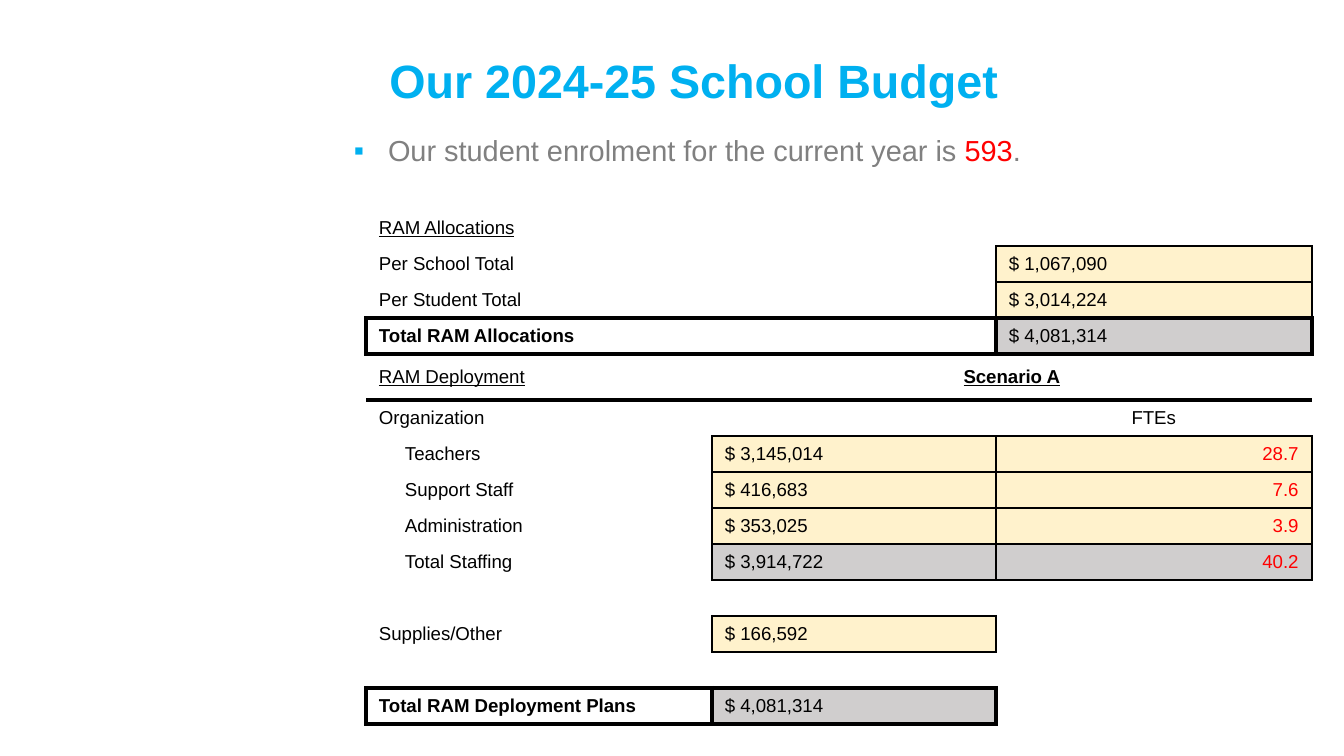
from lxml import etree
from pptx import Presentation
from pptx.dml.color import RGBColor
from pptx.enum.text import MSO_ANCHOR, PP_ALIGN
from pptx.oxml.ns import qn
from pptx.util import Pt

TOP, MIDDLE = MSO_ANCHOR.TOP, MSO_ANCHOR.MIDDLE
LEFT, CENTER, RIGHT = PP_ALIGN.LEFT, PP_ALIGN.CENTER, PP_ALIGN.RIGHT

BLACK = RGBColor(0x00, 0x00, 0x00)
RED = RGBColor(0xFF, 0x00, 0x00)
BLUE = RGBColor(0x00, 0xB0, 0xF0)
GRAY = RGBColor(0x80, 0x80, 0x80)
INPUT_FILL = RGBColor(0xFF, 0xF2, 0xCC)
TOTAL_FILL = RGBColor(0xD0, 0xCE, 0xCE)

FONT = "Arial"
PX_PER_INCH = 134.4
THIN, THICK = 1, 2.25

COLUMN_WIDTHS = [346, 284, 316]
ROW_HEIGHT, HEADING_HEIGHT = 36, 46
HEADING_ROW = 4
ROWS = [
    ["RAM Allocations", "", ""],
    ["Per School Total", "", "$ 1,067,090"],
    ["Per Student Total", "", "$ 3,014,224"],
    ["Total RAM Allocations", "", "$ 4,081,314"],
    ["RAM Deployment", "Scenario A", ""],
    ["Organization", "", "FTEs"],
    ["Teachers", "$ 3,145,014", "28.7"],
    ["Support Staff", "$ 416,683", "7.6"],
    ["Administration", "$ 353,025", "3.9"],
    ["Total Staffing", "$ 3,914,722", "40.2"],
    ["", "", ""],
    ["Supplies/Other", "$ 166,592", ""],
    ["", "", ""],
    ["Total RAM Deployment Plans", "$ 4,081,314", ""],
]
STAFF_ROWS = range(6, 10)
TOTAL_ROWS = (3, 9, 13)
UNDERLINED = ("RAM Allocations", "RAM Deployment", "Scenario A")
BOLD = ("Total RAM Allocations", "Scenario A", "Total RAM Deployment Plans")

# Outlined runs of cells: row, first column, last column, line width
OUTLINES = [(row, 2, 2, THIN) for row in (1, 2)]
OUTLINES += [(row, column, column, THIN) for row in STAFF_ROWS for column in (1, 2)]
OUTLINES += [(11, 1, 1, THIN), (3, 0, 1, THICK), (3, 2, 2, THICK),
             (13, 0, 0, THICK), (13, 1, 1, THICK)]


def px(length):
    return round(length * 914400 / PX_PER_INCH)


def place(shape, box):
    shape.left, shape.top, shape.width, shape.height = map(px, box)


def format_run(run, size, color, bold=False, underline=False):
    font = run.font
    font.name, font.size, font.bold, font.underline = FONT, Pt(size), bold, underline
    font.color.rgb = color


def add_title(slide, box):
    title = slide.shapes.title
    place(title, box)
    title.text_frame.text = "Our 2024-25 School Budget"
    title.text_frame.vertical_anchor = TOP
    paragraph = title.text_frame.paragraphs[0]
    paragraph.alignment = LEFT
    paragraph.line_spacing = 0.9
    format_run(paragraph.runs[0], 25, BLUE, bold=True)


def add_enrolment(slide, box):
    frame = slide.shapes.add_textbox(*map(px, box)).text_frame
    frame.word_wrap = True
    frame.margin_left = frame.margin_right = px(9)
    frame.margin_top = px(58)
    paragraph = frame.paragraphs[0]

    # Square bullet with a hanging indent
    properties = paragraph._p.get_or_add_pPr()
    properties.set("marL", str(px(34)))
    properties.set("indent", str(-px(34)))
    bullet_color = etree.SubElement(properties, qn("a:buClr"))
    etree.SubElement(bullet_color, qn("a:srgbClr"), val=str(BLUE))
    etree.SubElement(properties, qn("a:buFont"), typeface=FONT)
    etree.SubElement(properties, qn("a:buChar"), char="▪")
    paragraph.line_spacing = 0.9

    for text, color in (("Our student enrolment for the current year is ", GRAY),
                        ("593", RED), (".", GRAY)):
        run = paragraph.add_run()
        run.text = text
        format_run(run, 15.5, color)


def find_edges():
    """Return line widths of horizontal and vertical edges by row and column."""
    horizontal = {(HEADING_ROW + 1, column): THICK for column in range(3)}
    vertical = {}
    for row, first, last, width in OUTLINES:
        for column in range(first, last + 1):
            horizontal[row, column] = horizontal[row + 1, column] = width
        vertical[row, first] = vertical[row, last + 1] = width
    # Thick total boxes win over the thin cells above them
    return horizontal, vertical


def set_border(cell, side, width):
    properties = cell._tc.get_or_add_tcPr()
    line = etree.SubElement(properties, qn(f"a:ln{side}"), w=str(Pt(width or THIN)))
    if width:
        fill = etree.SubElement(line, qn("a:solidFill"))
        etree.SubElement(fill, qn("a:srgbClr"), val=str(BLACK))
    else:
        etree.SubElement(line, qn("a:noFill"))


def fill_cell(cell, text, row, column):
    is_amount = text.startswith("$")
    is_staff_count = column == 2 and row in STAFF_ROWS
    if is_amount or is_staff_count:
        cell.fill.solid()
        cell.fill.fore_color.rgb = TOTAL_FILL if row in TOTAL_ROWS else INPUT_FILL
    else:
        cell.fill.background()

    cell.vertical_anchor = MIDDLE
    is_staff_label = column == 0 and row in STAFF_ROWS
    cell.margin_left = px(39 if is_staff_label else 13)
    paragraph = cell.text_frame.paragraphs[0]
    if not text:
        # Keeps empty rows from growing to the default text size
        etree.SubElement(paragraph._p, qn("a:endParaRPr"), sz="1000")
        return
    paragraph.text = text
    if is_staff_count:
        paragraph.alignment = RIGHT
    elif text in ("Scenario A", "FTEs"):
        paragraph.alignment = CENTER
    format_run(paragraph.runs[0], 10, RED if is_staff_count else BLACK,
               text in BOLD, text in UNDERLINED)


def add_budget_table(slide, box):
    table = slide.shapes.add_table(len(ROWS), len(COLUMN_WIDTHS), *map(px, box)).table
    table.first_row = table.horz_banding = False
    for column, width in zip(table.columns, COLUMN_WIDTHS):
        column.width = px(width)
    for index, row in enumerate(table.rows):
        row.height = px(HEADING_HEIGHT if index == HEADING_ROW else ROW_HEIGHT)

    horizontal, vertical = find_edges()
    for row, texts in enumerate(ROWS):
        for column, text in enumerate(texts):
            cell = table.cell(row, column)
            set_border(cell, "L", vertical.get((row, column)))
            set_border(cell, "R", vertical.get((row, column + 1)))
            set_border(cell, "T", horizontal.get((row, column)))
            set_border(cell, "B", horizontal.get((row + 1, column)))
            fill_cell(cell, text, row, column)

    # Section headings span columns
    table.cell(0, 0).merge(table.cell(0, 2))
    table.cell(HEADING_ROW, 1).merge(table.cell(HEADING_ROW, 2))


def main():
    presentation = Presentation()
    presentation.slide_width, presentation.slide_height = px(1344), px(756)
    slide = presentation.slides.add_slide(presentation.slide_layouts[5])
    add_enrolment(slide, (345, 79, 965, 563))
    add_budget_table(slide, (366, 210, sum(COLUMN_WIDTHS), 514))
    add_title(slide, (376, 51, 968, 105))
    presentation.save("out.pptx")


if __name__ == "__main__":
    main()
